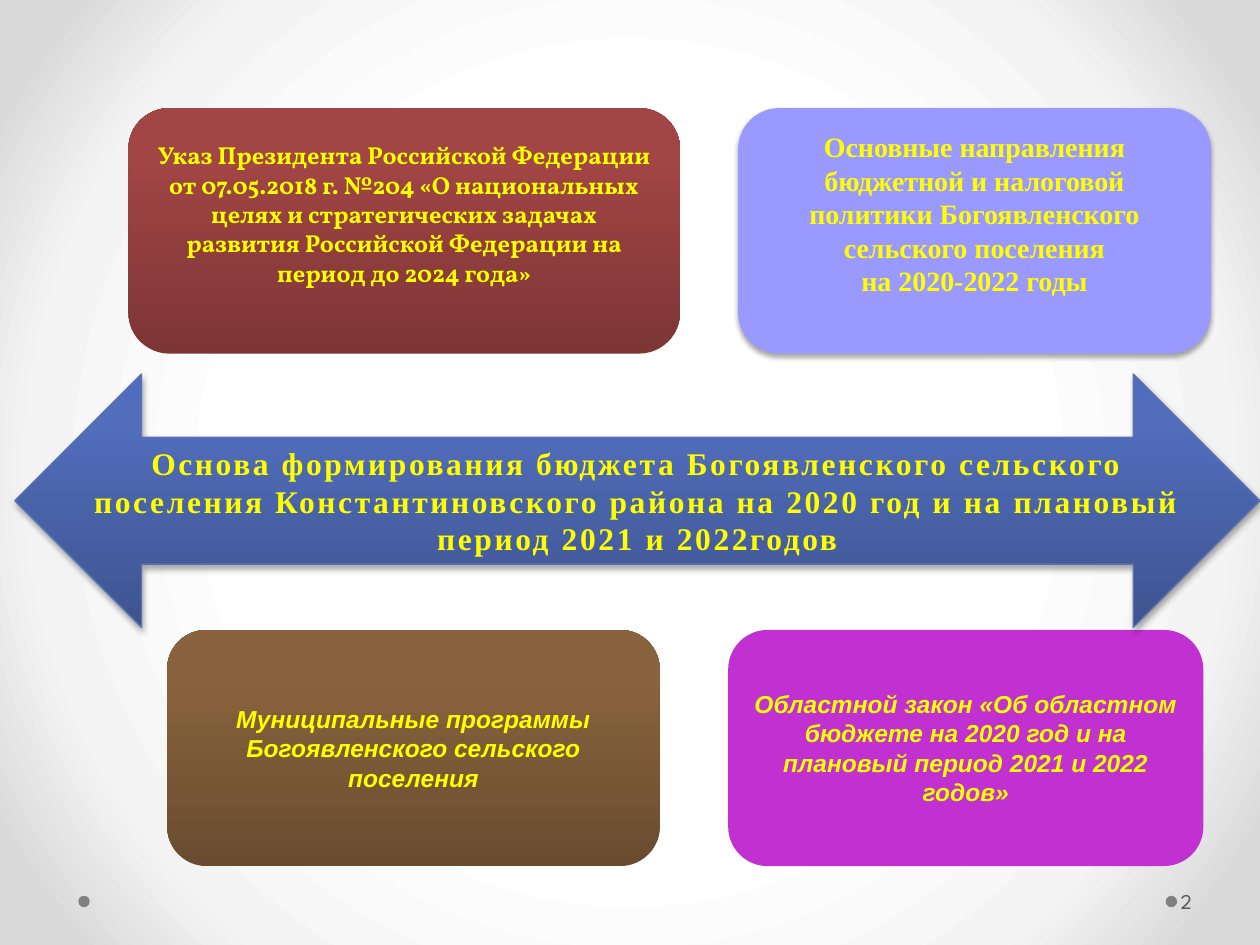
from lxml import etree
from pptx import Presentation
from pptx.dml.color import RGBColor
from pptx.enum.shapes import MSO_SHAPE
from pptx.enum.text import MSO_ANCHOR, PP_ALIGN
from pptx.oxml.ns import qn
from pptx.util import Cm, Pt

ROUND = MSO_SHAPE.ROUNDED_RECTANGLE
ARROW = MSO_SHAPE.LEFT_RIGHT_ARROW
DOT = MSO_SHAPE.OVAL
MIDDLE = MSO_ANCHOR.MIDDLE
CENTER = PP_ALIGN.CENTER
YELLOW = "FFFF00"


def color(code):
    return RGBColor.from_string(code)


def add_node(parent, tag, **attrs):
    values = {key: str(value) for key, value in attrs.items()}
    return etree.SubElement(parent, qn(tag), values)


def set_stops(root, stops):
    grad = next(root.iter(qn("a:gradFill")))
    for child in list(grad):
        grad.remove(child)
    group = add_node(grad, "a:gsLst")
    for place, code in stops:
        stop = add_node(group, "a:gs", pos=place * 1000)
        add_node(stop, "a:srgbClr", val=code)
    return grad


def paint_back(slide):
    slide.background.fill.gradient()
    stops = [(50, "FFFFFF"), (76, "F4F4F4"), (92, "DADADA")]
    grad = set_stops(slide.element, stops)
    circle = add_node(grad, "a:path", path="circle")
    add_node(circle, "a:fillToRect", l=50000, t=50000, r=50000, b=50000)


def add_shadow(shape):
    effects = shape.element.spPr.find(qn("a:effectLst"))
    outer = add_node(effects, "a:outerShdw", blurRad=Pt(3.1), dist=Pt(1.8),
                     dir=5400000, rotWithShape=0)
    tint = add_node(outer, "a:srgbClr", val="000000")
    add_node(tint, "a:alpha", val=35000)


def add_form(slide, kind, box, fill, shadow=False):
    shape = slide.shapes.add_shape(kind, *map(Cm, box))
    shape.shadow.inherit = False
    shape.line.fill.background()
    if isinstance(fill, str):
        shape.fill.solid()
        shape.fill.fore_color.rgb = color(fill)
    else:
        shape.fill.gradient()
        grad = set_stops(shape.element, zip((0, 80, 100), fill))
        add_node(grad, "a:lin", ang=16200000, scaled=0)
    if shadow:
        add_shadow(shape)
    return shape


def write(shape, lines, font, size, italic=False, bottom=0.13):
    frame = shape.text_frame
    frame.word_wrap = True
    frame.vertical_anchor = MIDDLE
    frame.margin_bottom = Cm(bottom)
    frame.text = "\n".join(lines)
    for para in frame.paragraphs:
        para.alignment = CENTER
        para.font.name = font
        para.font.size = Pt(size)
        para.font.bold = True
        para.font.italic = italic
        para.font.color.rgb = color(YELLOW)


def add_arrow(slide, text):
    arrow = add_form(slide, ARROW, (0.3, 7.54, 25.1, 5.11),
                     ("3E5490", "516DBB", "4F6CBE"), shadow=True)
    arrow.line.color.rgb = color("5C72B2")
    arrow.line.width = Pt(0.75)
    write(arrow, [text], "Times New Roman", 18)
    for run in arrow.text_frame.paragraphs[0].runs:
        run.font.element.set("spc", "150") if hasattr(run.font, "element") \
            else run._r.get_or_add_rPr().set("spc", "150")


def add_number(slide, text):
    box = slide.shapes.add_textbox(Cm(23.72), Cm(17.65), Cm(1.55), Cm(1.02))
    frame = box.text_frame
    frame.word_wrap = True
    frame.vertical_anchor = MIDDLE
    frame.margin_left = Cm(0.08)
    frame.margin_right = Cm(0.13)
    frame.text = text
    font = frame.paragraphs[0].font
    font.name = "League Spartan"
    font.size = Pt(12)
    font.color.rgb = color("595959")


def main():
    deck = Presentation()
    deck.slide_width, deck.slide_height = Cm(25.4), Cm(19.05)
    slide = deck.slides.add_slide(deck.slide_layouts[6])
    paint_back(slide)
    for left in (23.5, 1.58):
        add_form(slide, DOT, (left, 18.06, 0.23, 0.23), "808080")

    decree = add_form(slide, ROUND, (2.59, 2.18, 11.12, 4.95),
                      ("7D3535", "A24545", "A44343"))
    write(decree, ["Указ Президента Российской Федерации от 07.05.2018 г. №204 "
                   "«О национальных целях и стратегических задачах развития "
                   "Российской Федерации на период до 2024 года»"],
          "Vollkorn", 14, bottom=0.82)

    policy = add_form(slide, ROUND, (14.88, 2.18, 9.53, 4.95), "9999FF",
                      shadow=True)
    write(policy, ["Основные направления бюджетной и налоговой политики "
                   "Богоявленского сельского поселения",
                   "на 2020-2022 годы"],
          "Times New Roman", 16, bottom=0.82)

    plans = add_form(slide, ROUND, (3.37, 12.7, 9.93, 4.76),
                     ("694C2F", "89633D", "8B633C"))
    write(plans, ["Муниципальные программы Богоявленского сельского поселения"],
          "Arial", 14, italic=True)

    law = add_form(slide, ROUND, (14.68, 12.7, 9.58, 4.76), "C130D0")
    write(law, ["Областной закон «Об областном бюджете на 2020 год и на "
                "плановый период 2021 и 2022 годов»"],
          "Arial", 14, italic=True)

    add_arrow(slide, "Основа формирования бюджета Богоявленского сельского "
                     "поселения Константиновского района на 2020 год и на "
                     "плановый период 2021 и 2022годов")
    add_number(slide, "2")
    deck.save("out.pptx")


if __name__ == "__main__":
    main()
